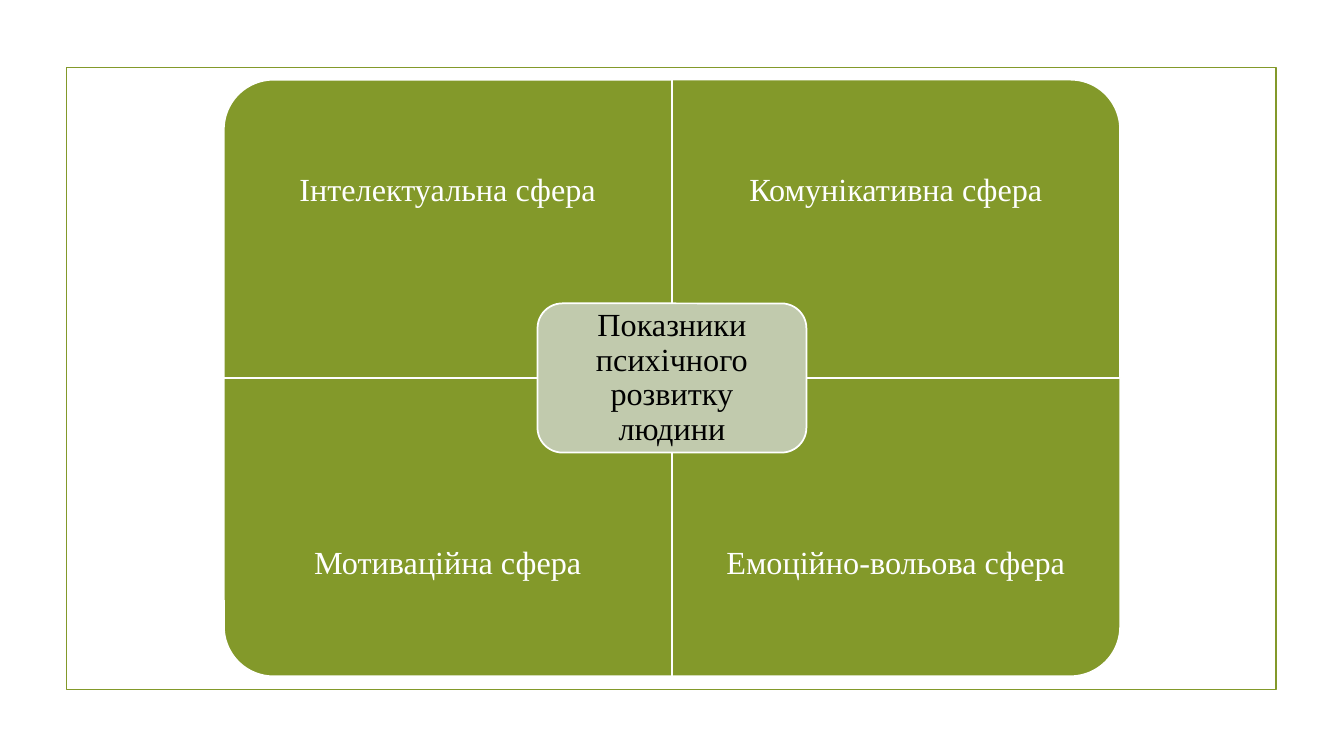
from pptx import Presentation
from pptx.dml.color import RGBColor
from pptx.enum.shapes import MSO_SHAPE
from pptx.enum.text import MSO_ANCHOR, PP_ALIGN
from pptx.util import Inches, Pt

COLORS = {"green": "83992A", "pale": "C1CAAD", "white": "FFFFFF", "black": "000000"}
FONT = "Times New Roman"
# label, column, row, rotation that turns the round corner outward
SPHERES = [
    ("Інтелектуальна сфера", 0, 0, 270),
    ("Комунікативна сфера", 1, 0, 0),
    ("Мотиваційна сфера", 0, 1, 180),
    ("Емоційно-вольова сфера", 1, 1, 90),
]


def color(name):
    return RGBColor.from_string(COLORS[name])


def add_panel(slide, kind, box, line, fill=None):
    shape = slide.shapes.add_shape(kind, *map(Inches, box))
    shape.shadow.inherit = False
    if fill:
        shape.fill.solid()
        shape.fill.fore_color.rgb = color(fill)
    else:
        shape.fill.background()
    shape.line.color.rgb = color(line)
    shape.line.width = Pt(1.25)
    return shape


def add_label(slide, text, box, ink, inset):
    frame = slide.shapes.add_textbox(*map(Inches, box)).text_frame
    frame.word_wrap = True
    frame.vertical_anchor = MSO_ANCHOR.MIDDLE
    frame.margin_left = frame.margin_right = Inches(inset)
    frame.margin_top = frame.margin_bottom = Inches(inset)
    frame.text = text
    para = frame.paragraphs[0]
    para.alignment = PP_ALIGN.CENTER
    para.line_spacing = 0.9
    font = para.runs[0].font
    font.name, font.size = FONT, Pt(23)
    font.color.rgb = color(ink)


def add_sphere(slide, box, text, row, turn):
    """Draw one quadrant; its label fills the outer three quarters."""
    left, top, width, height = box
    wide, high = (height, width) if turn % 180 else (width, height)
    place = (left + (width - wide) / 2, top + (height - high) / 2, wide, high)
    panel = add_panel(slide, MSO_SHAPE.ROUND_1_RECTANGLE, place, "white", "green")
    panel.rotation = turn
    area = (left, top + row * height / 4, width, height * 3 / 4)
    add_label(slide, text, area, "white", 0.18)


def add_core(slide, box):
    left, top, width, height = box
    add_panel(slide, MSO_SHAPE.ROUNDED_RECTANGLE, box, "white", "pale")
    pad = 0.07
    area = (left + pad, top + pad, width - 2 * pad, height - 2 * pad)
    add_label(slide, "Показники психічного розвитку людини", area, "black", 0.1)


def add_matrix(slide, box):
    left, top, width, height = box
    wide, high = width / 2, height / 2
    for text, col, row, turn in SPHERES:
        cell = (left + col * wide, top + row * high, wide, high)
        add_sphere(slide, cell, text, row, turn)
    core_w, core_h = wide * 0.6, high / 2
    add_core(slide, (left + wide - core_w / 2, top + high - core_h / 2, core_w, core_h))


def main():
    deck = Presentation()
    deck.slide_width, deck.slide_height = Inches(13.33), Inches(7.5)
    slide = deck.slides.add_slide(deck.slide_layouts[6])
    add_panel(slide, MSO_SHAPE.RECTANGLE, (0.66, 0.67, 12, 6.17), "green")
    add_matrix(slide, (2.22, 0.79, 8.89, 5.92))
    deck.save("out.pptx")


if __name__ == "__main__":
    main()
